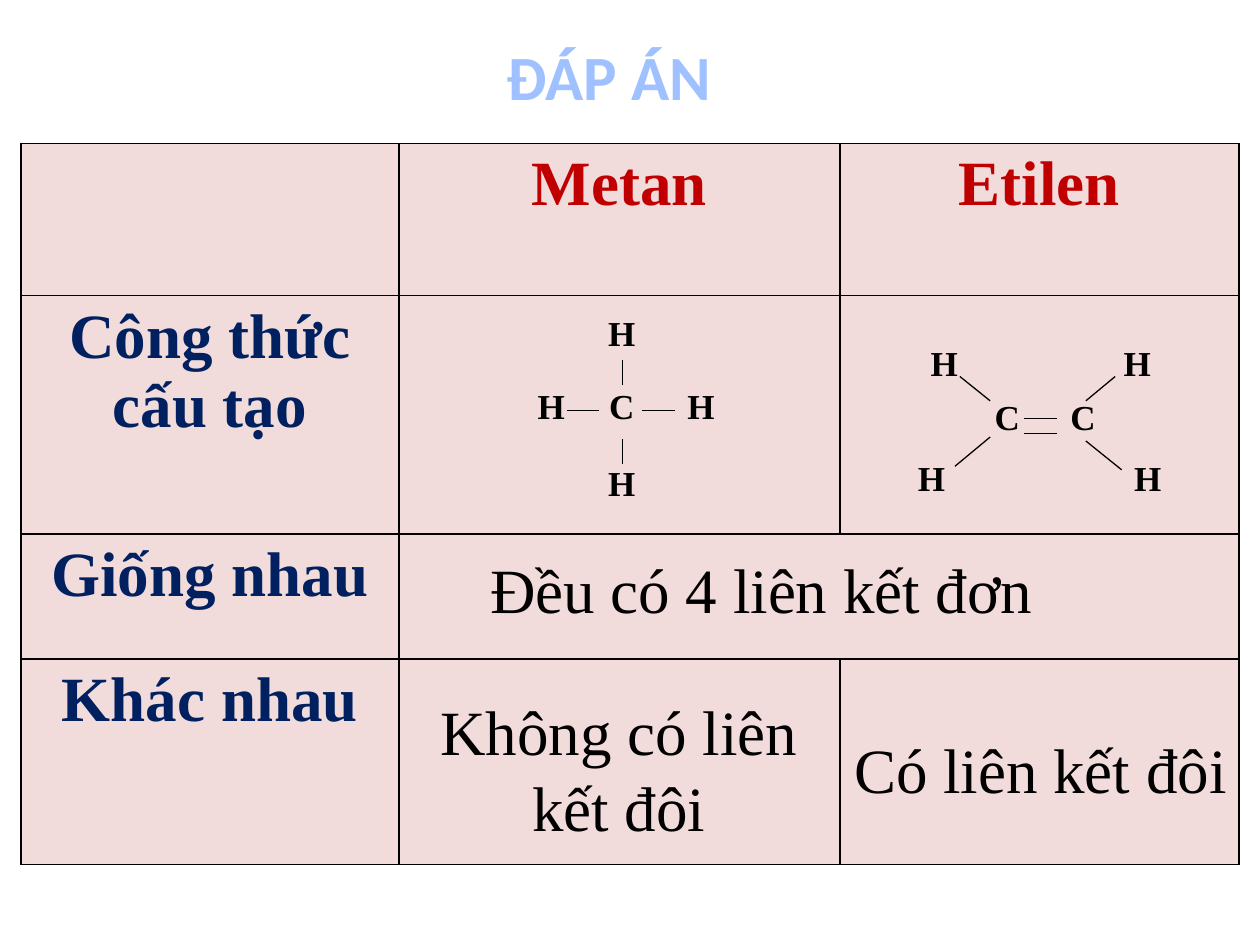
from dataclasses import dataclass
from typing import NamedTuple

from lxml.etree import SubElement
from pptx import Presentation
from pptx.dml.color import RGBColor
from pptx.enum.shapes import MSO_CONNECTOR
from pptx.enum.text import MSO_ANCHOR, PP_ALIGN
from pptx.oxml.ns import qn
from pptx.util import Cm, Pt


@dataclass(frozen=True)
class Theme:
    serif: str = "Times New Roman"
    sans: str = "Calibri"
    title: str = "A0C1FF"
    heading: str = "C00000"
    label: str = "002060"
    ink: str = "000000"
    cell: str = "F2DCDB"
    large: int = 36
    small: int = 20
    border: float = 1
    bond: float = 0.75


class Atom(NamedTuple):
    symbol: str
    left: float
    top: float
    width: float = 1.75


class Bond(NamedTuple):
    x1: float
    y1: float
    x2: float
    y2: float


class Molecule(NamedTuple):
    atoms: list[Atom]
    bonds: list[Bond]


class Caption(NamedTuple):
    text: str
    left: float
    top: float
    width: float
    height: float
    align: PP_ALIGN = PP_ALIGN.LEFT


THEME = Theme()
COLUMNS = [7.62, 8.89, 8.05]
ROWS = [3.07, 4.8, 2.53, 4.14]
HEADINGS = ["Metan", "Etilen"]
LABELS = ["Công thức cấu tạo", "Giống nhau", "Khác nhau"]

METAN = Molecule(
    [
        Atom("C", 11.66, 7.62),
        Atom("H", 11.66, 6.15),
        Atom("H", 11.66, 9.17),
        Atom("H", 13.26, 7.62),
        Atom("H", 10.24, 7.62),
    ],
    [
        Bond(11.43, 8.28, 12.07, 8.28),
        Bond(12.95, 8.28, 13.61, 8.28),
        Bond(12.55, 9.35, 12.55, 8.84),
        Bond(12.55, 7.77, 12.55, 7.26),
    ],
)
ETILEN = Molecule(
    [
        Atom("C", 19.43, 7.85),
        Atom("C", 20.96, 7.85),
        Atom("H", 22.05, 6.76),
        Atom("H", 22.48, 9.07, 1.32),
        Atom("H", 18.16, 6.76),
        Atom("H", 18.16, 9.07, 1.24),
    ],
    [
        Bond(20.65, 8.74, 21.31, 8.74),
        Bond(20.65, 8.43, 21.31, 8.43),
        Bond(21.89, 8.08, 22.48, 7.59),
        Bond(21.89, 8.89, 22.61, 9.47),
        Bond(19.96, 8.08, 19.35, 7.59),
        Bond(19.96, 8.81, 19.25, 9.4),
    ],
)
TITLE = Caption("ĐÁP ÁN", 6.35, -0.08, 11.86, 3.18, PP_ALIGN.CENTER)
ANSWERS = [
    Caption("Không có liên kết đôi", 8.31, 13.82, 8.33, 3.33, PP_ALIGN.CENTER),
    Caption("Đều có 4 liên kết đơn", 9.63, 10.97, 14.02, 1.8),
    Caption("Có liên kết đôi", 16.97, 14.58, 9.19, 1.8),
]


def write(frame, text: str, align: PP_ALIGN, color: str, **font_values) -> None:
    paragraph = frame.paragraphs[0]
    paragraph.alignment = align
    run = paragraph.add_run()
    run.text = text
    values = {"name": THEME.serif, "size": Pt(THEME.large), "bold": False} | font_values
    for attribute, value in values.items():
        setattr(run.font, attribute, value)
    run.font.color.rgb = RGBColor.from_string(color)


def add_caption(shapes, caption: Caption, color: str = THEME.ink, **font_values) -> None:
    left, top, width, height = map(Cm, caption[1:5])
    frame = shapes.add_textbox(left, top, width, height).text_frame
    frame.word_wrap = True
    frame.vertical_anchor = MSO_ANCHOR.MIDDLE
    write(frame, caption.text, caption.align, color, **font_values)


def add_bond(shapes, bond: Bond) -> None:
    line = shapes.add_connector(MSO_CONNECTOR.STRAIGHT, *map(Cm, bond))
    line.line.color.rgb = RGBColor.from_string(THEME.ink)
    line.line.width = Pt(THEME.bond)
    SubElement(line._element.spPr, qn("a:effectLst"))


def add_molecule(slide, molecule: Molecule) -> None:
    shapes = slide.shapes.add_group_shape().shapes
    for atom in molecule.atoms:
        symbol = Caption(atom.symbol, atom.left, atom.top, atom.width, 1.1, PP_ALIGN.CENTER)
        add_caption(shapes, symbol, size=Pt(THEME.small), bold=True)
    for bond in molecule.bonds:
        add_bond(shapes, bond)


def style_cell(cell) -> None:
    properties = cell._tc.get_or_add_tcPr()
    for side in ("a:lnL", "a:lnR", "a:lnT", "a:lnB"):
        edge = SubElement(properties, qn(side), w=str(Pt(THEME.border)))
        fill = SubElement(edge, qn("a:solidFill"))
        SubElement(fill, qn("a:srgbClr"), val=THEME.ink)
    cell.fill.solid()
    cell.fill.fore_color.rgb = RGBColor.from_string(THEME.cell)


def add_comparison(slide) -> None:
    table = slide.shapes.add_table(
        len(ROWS), len(COLUMNS), Cm(0.42), Cm(2.89), Cm(sum(COLUMNS)), Cm(sum(ROWS))
    ).table
    table.first_row = table.horz_banding = False
    for column, width in zip(table.columns, COLUMNS):
        column.width = Cm(width)
    for row, height in zip(table.rows, ROWS):
        row.height = Cm(height)
    for cell in table.iter_cells():
        style_cell(cell)
    table.cell(2, 1).merge(table.cell(2, 2))
    for index, heading in enumerate(HEADINGS, 1):
        write(table.cell(0, index).text_frame, heading, PP_ALIGN.CENTER, THEME.heading, bold=True)
    for index, label in enumerate(LABELS, 1):
        write(table.cell(index, 0).text_frame, label, PP_ALIGN.CENTER, THEME.label, bold=True)


def main() -> None:
    presentation = Presentation()
    presentation.slide_width, presentation.slide_height = Cm(25.4), Cm(19.05)
    slide = presentation.slides.add_slide(presentation.slide_layouts[6])
    add_comparison(slide)
    for molecule in (METAN, ETILEN):
        add_molecule(slide, molecule)
    add_caption(slide.shapes, TITLE, THEME.title, name=THEME.sans, bold=True)
    for answer in ANSWERS:
        add_caption(slide.shapes, answer)
    presentation.save("out.pptx")


if __name__ == "__main__":
    main()
